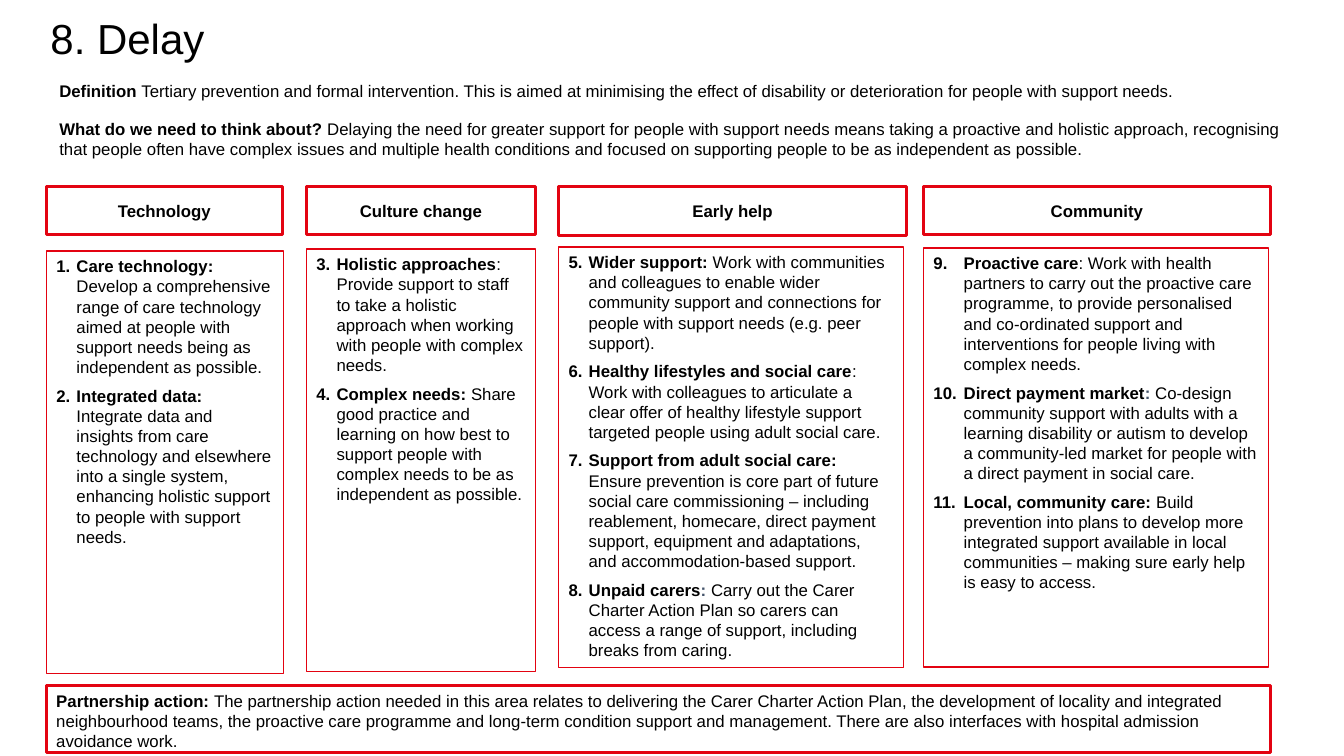
from dataclasses import dataclass

from lxml import etree
from pptx import Presentation
from pptx import util as u
from pptx.dml.color import RGBColor
from pptx.enum import shapes, text
from pptx.oxml import ns

RED = RGBColor(0xE3, 0x03, 0x11)
BLACK = RGBColor(0x00, 0x00, 0x00)
WHITE = RGBColor(0xFF, 0xFF, 0xFF)
SLATE = RGBColor(0x44, 0x54, 0x6A)
FONT = "Arial"
BODY_SIZE = 12


@dataclass
class Box:
    left: float
    top: float
    width: float
    height: float

    def lengths(self) -> list:
        return [u.Inches(n) for n in (self.left, self.top, self.width, self.height)]


@dataclass
class Passage:
    lead: str
    body: str
    slate_colon: bool = False


@dataclass
class Theme:
    heading: str
    heading_box: Box
    actions_box: Box
    first_number: int
    indent: float
    filled: bool
    actions: list[Passage]


THEMES = [
    Theme("Technology", Box(0.46, 1.85, 2.34, 0.48), Box(0.46, 2.49, 2.35, 4.19), 1, 0.2, False, [
        Passage("Care technology: ", "Develop a comprehensive range of care technology aimed at "
                "people with support needs being as independent as possible."),
        Passage("Integrated data: ", "Integrate data and insights from care technology and "
                "elsewhere into a single system, enhancing holistic support to people with "
                "support needs."),
    ]),
    Theme("Culture change", Box(3.04, 1.85, 2.27, 0.48), Box(3.04, 2.47, 2.27, 4.19), 3, 0.2, False, [
        Passage("Holistic approaches", ": Provide support to staff to take a holistic approach "
                "when working with people with complex needs."),
        Passage("Complex needs: ", "Share good practice and learning on how best to support "
                "people with complex needs to be as independent as possible."),
    ]),
    Theme("Early help", Box(5.54, 1.85, 3.45, 0.49), Box(5.54, 2.45, 3.42, 4.17), 5, 0.2, True, [
        Passage("Wider support: ", "Work with communities and colleagues to enable wider "
                "community support and connections for people with support needs (e.g. peer "
                "support)."),
        Passage("Healthy lifestyles and social care", ": Work with colleagues to articulate a "
                "clear offer of healthy lifestyle support targeted people using adult social "
                "care."),
        Passage("Support from adult social care: ", "Ensure prevention is core part of future "
                "social care commissioning – including reablement, homecare, direct payment "
                "support, equipment and adaptations, and accommodation-based support."),
        Passage("Unpaid carers", "Carry out the Carer Charter Action Plan so carers can access "
                "a range of support, including breaks from caring.", slate_colon=True),
    ]),
    Theme("Community", Box(9.16, 1.85, 3.44, 0.48), Box(9.16, 2.46, 3.42, 4.16), 9, 0.3, True, [
        Passage("Proactive care", ": Work with health partners to carry out the proactive care "
                "programme, to provide personalised and co-ordinated support and interventions "
                "for people living with complex needs."),
        Passage("Direct payment market", "Co-design community support with adults with a "
                "learning disability or autism to develop a community-led market for people "
                "with a direct payment in social care.", slate_colon=True),
        Passage("Local, community care: ", "Build prevention into plans to develop more "
                "integrated support available in local communities – making sure early help is "
                "easy to access."),
    ]),
]

INTRODUCTION = [
    Passage("Definition ", "Tertiary prevention and formal intervention. This is aimed at "
            "minimising the effect of disability or deterioration for people with support needs."),
    Passage("What do we need to think about? ", "Delaying the need for greater support for "
            "people with support needs means taking a proactive and holistic approach, "
            "recognising that people often have complex issues and multiple health conditions "
            "and focused on supporting people to be as independent as possible."),
]

PARTNERSHIP = Passage(
    "Partnership action: ", "The partnership action needed in this area relates to delivering "
    "the Carer Charter Action Plan, the development of locality and integrated neighbourhood "
    "teams, the proactive care programme and long-term condition support and management. There "
    "are also interfaces with hospital admission avoidance work.")


def set_font(paragraph, size: int = BODY_SIZE) -> None:
    paragraph.font.name = FONT
    paragraph.font.size = u.Pt(size)
    paragraph.font.color.rgb = BLACK


def number_paragraph(paragraph, start: int, indent: float) -> None:
    properties = paragraph._p.get_or_add_pPr()
    properties.set("marL", str(u.Inches(indent)))
    properties.set("indent", str(-u.Inches(indent)))
    numbering = etree.SubElement(properties, ns.qn("a:buAutoNum"), type="arabicPeriod")
    numbering.set("startAt", str(start))


def add_run(paragraph, words: str, bold: bool):
    run = paragraph.add_run()
    run.text = words
    run.font.bold = bold
    return run


def write_passages(frame, passages: list[Passage], gap: float = 0,
                   start: int = 0, indent: float = 0) -> None:
    for index, passage in enumerate(passages):
        paragraph = frame.add_paragraph() if index else frame.paragraphs[0]
        paragraph.alignment = text.PP_ALIGN.LEFT
        paragraph.space_after = u.Pt(gap)
        if start:
            number_paragraph(paragraph, start, indent)
        set_font(paragraph)
        add_run(paragraph, passage.lead, True)
        if passage.slate_colon:
            add_run(paragraph, ": ", True).font.color.rgb = SLATE
        add_run(paragraph, passage.body, False)


def add_panel(slide, box: Box, line_width: float, filled: bool,
              anchor: text.MSO_ANCHOR = text.MSO_ANCHOR.TOP):
    panel = slide.shapes.add_shape(shapes.MSO_SHAPE.RECTANGLE, *box.lengths())
    panel.shadow.inherit = False
    if filled:
        panel.fill.solid()
        panel.fill.fore_color.rgb = WHITE
    else:
        panel.fill.background()
    panel.line.color.rgb = RED
    panel.line.width = u.Pt(line_width)
    panel.text_frame.word_wrap = True
    panel.text_frame.vertical_anchor = anchor
    return panel.text_frame


def add_theme(slide, theme: Theme) -> None:
    heading = add_panel(slide, theme.heading_box, 2, False, text.MSO_ANCHOR.MIDDLE).paragraphs[0]
    heading.text = theme.heading
    heading.alignment = text.PP_ALIGN.CENTER
    set_font(heading)
    heading.font.bold = True
    actions = add_panel(slide, theme.actions_box, 1, theme.filled)
    write_passages(actions, theme.actions, 6, theme.first_number, theme.indent)


def main() -> None:
    deck = Presentation()
    deck.slide_width, deck.slide_height = u.Inches(13.33), u.Inches(7.5)
    slide = deck.slides.add_slide(deck.slide_layouts[5])

    # Title
    title = slide.shapes.title
    title.left, title.top, title.width, title.height = Box(0.4, 0.07, 10.77, 0.61).lengths()
    title.text_frame.text = "8. Delay"
    title.text_frame.auto_size = text.MSO_AUTO_SIZE.SHAPE_TO_FIT_TEXT
    title.text_frame.vertical_anchor = text.MSO_ANCHOR.TOP
    title.text_frame.paragraphs[0].alignment = text.PP_ALIGN.LEFT
    set_font(title.text_frame.paragraphs[0], 30)

    # Definition and question
    introduction = slide.shapes.add_textbox(*Box(0.49, 0.75, 12.36, 0.95).lengths()).text_frame
    introduction.word_wrap = True
    write_passages(introduction, INTRODUCTION, gap=13)

    # Themes with their numbered actions
    for theme in THEMES:
        add_theme(slide, theme)

    # Partnership action
    partnership = add_panel(slide, Box(0.46, 6.8, 12.14, 0.67), 2, True)
    write_passages(partnership, [PARTNERSHIP])

    deck.save("out.pptx")


if __name__ == "__main__":
    main()
